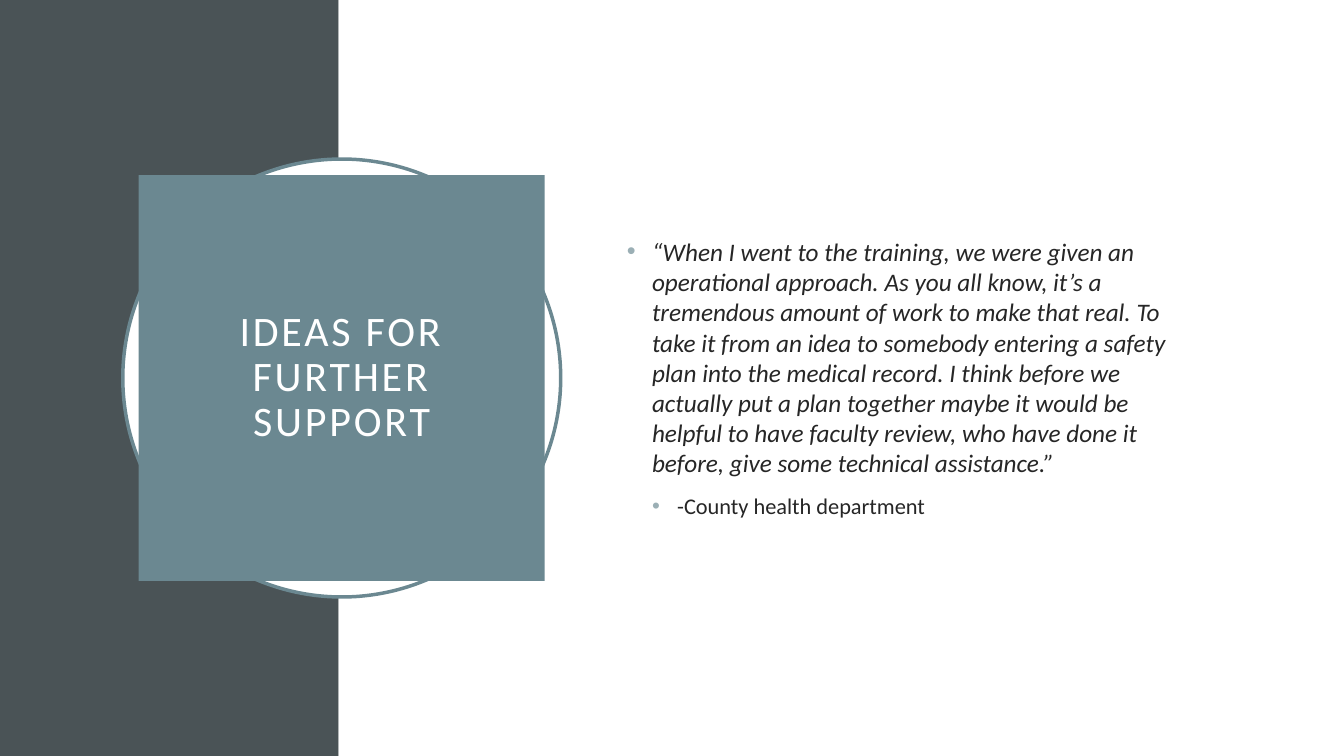
from dataclasses import dataclass

from lxml.etree import SubElement
from pptx import Presentation
from pptx.dml.color import RGBColor as RGB
from pptx.enum.shapes import MSO_SHAPE as SHAPE
from pptx.enum.text import MSO_ANCHOR as ANCHOR, PP_ALIGN as ALIGN
from pptx.oxml.ns import qn
from pptx.util import Pt

COLORS = {
    "slate": "4A5356",
    "teal": "6B8891",
    "white": "FFFFFF",
    "text": "262626",
    "bullet": "9BAFB5",
}
WIDTH, HEIGHT, SPLIT = 960, 540, 241.92
CENTER_X, CENTER_Y = 244.1, 270
INDENT = 18


@dataclass
class Panel:
    kind: SHAPE
    left: float
    top: float
    width: float
    height: float
    fill: str
    line: str | None = None


def centered(kind: SHAPE, size: float, fill: str, line: str | None = None) -> Panel:
    return Panel(kind, CENTER_X - size / 2, CENTER_Y - size / 2, size, size, fill, line)


def color(name: str) -> RGB:
    return RGB.from_string(COLORS[name])


def draw_panel(s, panel: Panel):
    sp = s.shapes.add_shape(
        panel.kind, Pt(panel.left), Pt(panel.top), Pt(panel.width), Pt(panel.height)
    )
    sp.shadow.inherit = False
    sp.fill.solid()
    sp.fill.fore_color.rgb = color(panel.fill)
    if panel.line:
        sp.line.color.rgb = color(panel.line)
        sp.line.width = Pt(2.5)
    else:
        sp.line.fill.background()
    return sp


def write(p, text: str, *, size: float, fill: str, italic: bool = False,
          align=ALIGN.LEFT, line_spacing: float = 1.0, before: float = 0,
          tracking: float = 0, level: int | None = None) -> None:
    p.alignment = align
    p.line_spacing = line_spacing
    p.space_before = Pt(before)
    r = p.add_run()
    r.text = text
    r.font.name = "Calibri"
    r.font.size = Pt(size)
    r.font.italic = italic
    r.font.color.rgb = color(fill)
    if tracking:
        r.font._element.set("spc", str(int(tracking * 100)))
    if level is not None:
        p.level = level
        pPr = p._p.get_or_add_pPr()
        pPr.set("marL", str(Pt(INDENT * (level + 1))))
        pPr.set("indent", str(Pt(-INDENT)))
        bullet_color = SubElement(pPr, qn("a:buClr"))
        SubElement(bullet_color, qn("a:srgbClr"), val=COLORS["bullet"])
        SubElement(pPr, qn("a:buFont"), typeface="Arial")
        SubElement(pPr, qn("a:buChar"), char="•")


def main() -> None:
    prs = Presentation()
    prs.slide_width, prs.slide_height = Pt(WIDTH), Pt(HEIGHT)
    s = prs.slides.add_slide(prs.slide_layouts[6])

    panels = [
        Panel(SHAPE.RECTANGLE, 0, 0, SPLIT, HEIGHT, "slate"),
        Panel(SHAPE.RECTANGLE, SPLIT, 0, WIDTH - SPLIT, HEIGHT, "white"),
        centered(SHAPE.OVAL, 312.8, "white", "teal"),
    ]
    for panel in panels:
        draw_panel(s, panel)

    title = draw_panel(s, centered(SHAPE.RECTANGLE, 290, "teal"))
    tf = title.text_frame
    tf.word_wrap = True
    tf.vertical_anchor = ANCHOR.MIDDLE
    tf.margin_left = tf.margin_right = Pt(57)
    write(tf.paragraphs[0], "IDEAS FOR FURTHER SUPPORT", size=30, fill="white",
          align=ALIGN.CENTER, line_spacing=0.9, tracking=2)

    body = s.shapes.add_textbox(Pt(440.64), Pt(110.16), Pt(419.04), Pt(319))
    tf = body.text_frame
    tf.word_wrap = True
    tf.vertical_anchor = ANCHOR.MIDDLE
    write(tf.paragraphs[0],
          "“When I went to the training, we were given an operational approach. "
          "As you all know, it’s a tremendous amount of work to make that real. "
          "To take it from an idea to somebody entering a safety plan into the "
          "medical record. I think before we actually put a plan together maybe "
          "it would be helpful to have faculty review, who have done it before, "
          "give some technical assistance.”",
          size=18, fill="text", italic=True, before=10, level=0)
    write(tf.add_paragraph(), "-County health department",
          size=16, fill="text", before=10, level=1)

    prs.save("out.pptx")


if __name__ == "__main__":
    main()
